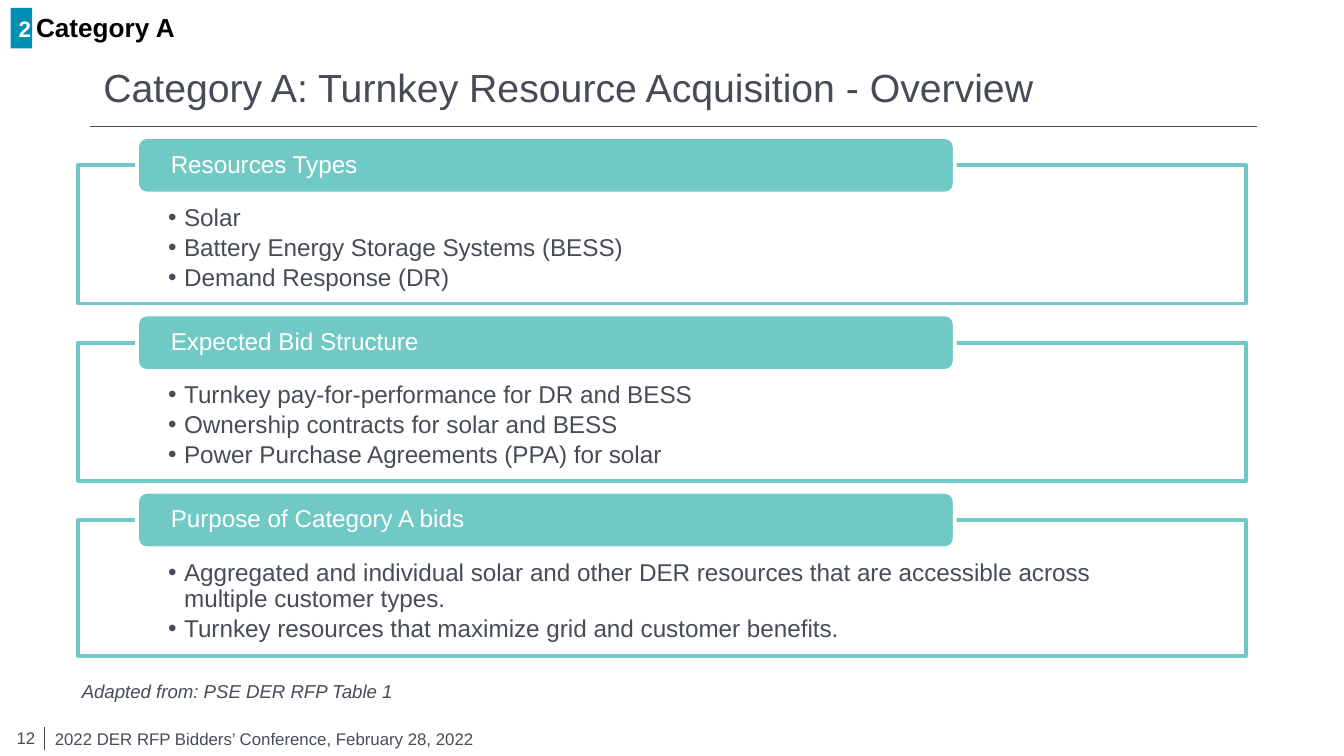
import pptx
import pptx.util
import pptx.dml.color
import pptx.enum.shapes
import pptx.enum.text
import pptx.oxml
import pptx.oxml.ns

Inches = pptx.util.Inches
Pt = pptx.util.Pt
RGB = pptx.dml.color.RGBColor
SHAPE = pptx.enum.shapes.MSO_SHAPE
ALIGN = pptx.enum.text.PP_ALIGN
ANCHOR = pptx.enum.text.MSO_ANCHOR
qn = pptx.oxml.ns.qn

SLATE = RGB(0x47, 0x4C, 0x55)
TITLE = RGB(0x47, 0x4B, 0x55)
TEAL = RGB(0x70, 0xC9, 0xC4)
BLUE = RGB(0x00, 0x8E, 0xB2)
WHITE = RGB(0xFF, 0xFF, 0xFF)
BLACK = RGB(0, 0, 0)

PANELS = [
    ("Resources Types", 1.03,
     ["Solar", "Battery Energy Storage Systems (BESS)", "Demand Response (DR)"]),
    ("Expected Bid Structure", 1.03,
     ["Turnkey pay-for-performance for DR and BESS",
      "Ownership contracts for solar and BESS",
      "Power Purchase Agreements (PPA) for solar"]),
    ("Purpose of Category A bids", 1.01,
     ["Aggregated and individual solar and other DER resources that are "
      "accessible across multiple customer types.",
      "Turnkey resources that maximize grid and customer benefits."]),
]


def add_child(node, tag, **attrs):
    child = pptx.oxml.parse_xml(
        f'<a:{tag} xmlns:a="http://schemas.openxmlformats.org/drawingml/2006/main"/>')
    for name, value in attrs.items():
        child.set(name, value)
    node.append(child)
    return child


def write(shape, lines, size, color=SLATE, bold=False, italic=False, align=ALIGN.LEFT,
          anchor=ANCHOR.TOP, inset=(0.1, 0.05, 0.1, 0.05), bullet=False,
          spacing=None, after=0):
    """Fill a shape with one paragraph for each line."""
    frame = shape.text_frame
    frame.word_wrap = True
    frame.vertical_anchor = anchor
    (frame.margin_left, frame.margin_top,
     frame.margin_right, frame.margin_bottom) = map(Inches, inset)
    for i, line in enumerate(lines):
        para = frame.add_paragraph() if i else frame.paragraphs[0]
        if bullet:
            props = para._p.get_or_add_pPr()
            props.set("marL", str(Inches(0.12)))
            props.set("indent", str(-Inches(0.12)))
            add_child(props, "buFont", typeface="Arial")
            add_child(props, "buChar", char="•")
        para.alignment = align
        para.space_after = Pt(after)
        if spacing:
            para.line_spacing = spacing
        run = para.add_run()
        run.text = line
        font = run.font
        font.name, font.size, font.color.rgb = "Arial", Pt(size), color
        font.bold, font.italic = bold, italic


def add_text(slide, box, text, size, **style):
    write(slide.shapes.add_textbox(*map(Inches, box)), [text], size, **style)


def add_box(slide, kind, box, fill, line=None):
    shape = slide.shapes.add_shape(kind, *map(Inches, box))
    shape.shadow.inherit = False
    shape.fill.solid()
    shape.fill.fore_color.rgb = fill
    if line is None:
        shape.line.fill.background()
    else:
        shape.line.color.rgb = line
        shape.line.width = Pt(2)
    return shape


def add_rule(slide, x1, y1, x2, y2):
    rule = slide.shapes.add_connector(
        pptx.enum.shapes.MSO_CONNECTOR.STRAIGHT, *map(Inches, (x1, y1, x2, y2)))
    rule.line.color.rgb = SLATE
    rule.line.width = Pt(0.75)
    add_child(rule._element.spPr, "effectLst")


def add_title(slide, left, top, width, height):
    add_rule(slide, left, top + height, left + width, top + height)
    add_text(slide, (left, top, width, height),
             "Category A: Turnkey Resource Acquisition - Overview", 21,
             color=TITLE, anchor=ANCHOR.MIDDLE)


def add_footer(slide, left, top):
    add_text(slide, (left, top, 0.42, 0.34), "12", 9,
             align=ALIGN.RIGHT, anchor=ANCHOR.MIDDLE)
    add_rule(slide, left + 0.39, top + 0.09, left + 0.39, top + 0.26)
    add_text(slide, (left + 0.37, top + 0.05, 4.84, 0.25),
             "2022 DER RFP Bidders’ Conference, February 28, 2022", 9)


def add_tag(slide, left, top):
    badge = add_box(slide, SHAPE.RECTANGLE, (left, top, 0.16, 0.3), BLUE)
    write(badge, ["2"], 12, color=WHITE, bold=True, align=ALIGN.CENTER,
          anchor=ANCHOR.MIDDLE, inset=(0.05, 0, 0, 0))
    add_text(slide, (left + 0.09, top + 0.02, 2.67, 0.24), "Category A", 14,
             color=BLACK, bold=True, anchor=ANCHOR.MIDDLE)


def add_panel(slide, left, top, width, height, head, points):
    # Outlined body, starting at the middle of the header
    body = add_box(slide, SHAPE.RECTANGLE, (left, top + 0.21, width, height), WHITE, TEAL)
    tint = body._element.spPr.find(qn("a:solidFill")).find(qn("a:srgbClr"))
    add_child(tint, "alpha", val="90000")
    write(body, points, 13, inset=(0.67, 0.3, 0.67, 0.1),
          bullet=True, spacing=0.9, after=1.95)
    # Rounded header
    tab = add_box(slide, SHAPE.ROUNDED_RECTANGLE,
                  (left + 0.44, top, 0.7 * width, 0.42), TEAL, WHITE)
    write(tab, [head], 13, color=WHITE, anchor=ANCHOR.MIDDLE,
          inset=(0.23, 0, 0.23, 0), spacing=0.9)


def main():
    deck = pptx.Presentation()
    # Widescreen, 16 to 9
    deck.slide_width = Inches(10)
    deck.slide_height = deck.slide_width * 9 // 16
    slide = deck.slides.add_slide(deck.slide_layouts[6])

    add_title(slide, 0.67, 0.35, 8.68, 0.59)
    add_footer(slide, -0.06, 5.32)
    add_text(slide, (0.51, 5.01, 3.72, 0.27), "Adapted from: PSE DER RFP Table 1",
             10, italic=True)
    add_tag(slide, 0.08, 0.06)

    # Stack the panels with an equal gap
    top = 1.02
    for head, height, points in PANELS:
        add_panel(slide, 0.58, top, 8.69, height, head, points)
        top += 0.21 + height + 0.08

    deck.save("out.pptx")


if __name__ == "__main__":
    main()
